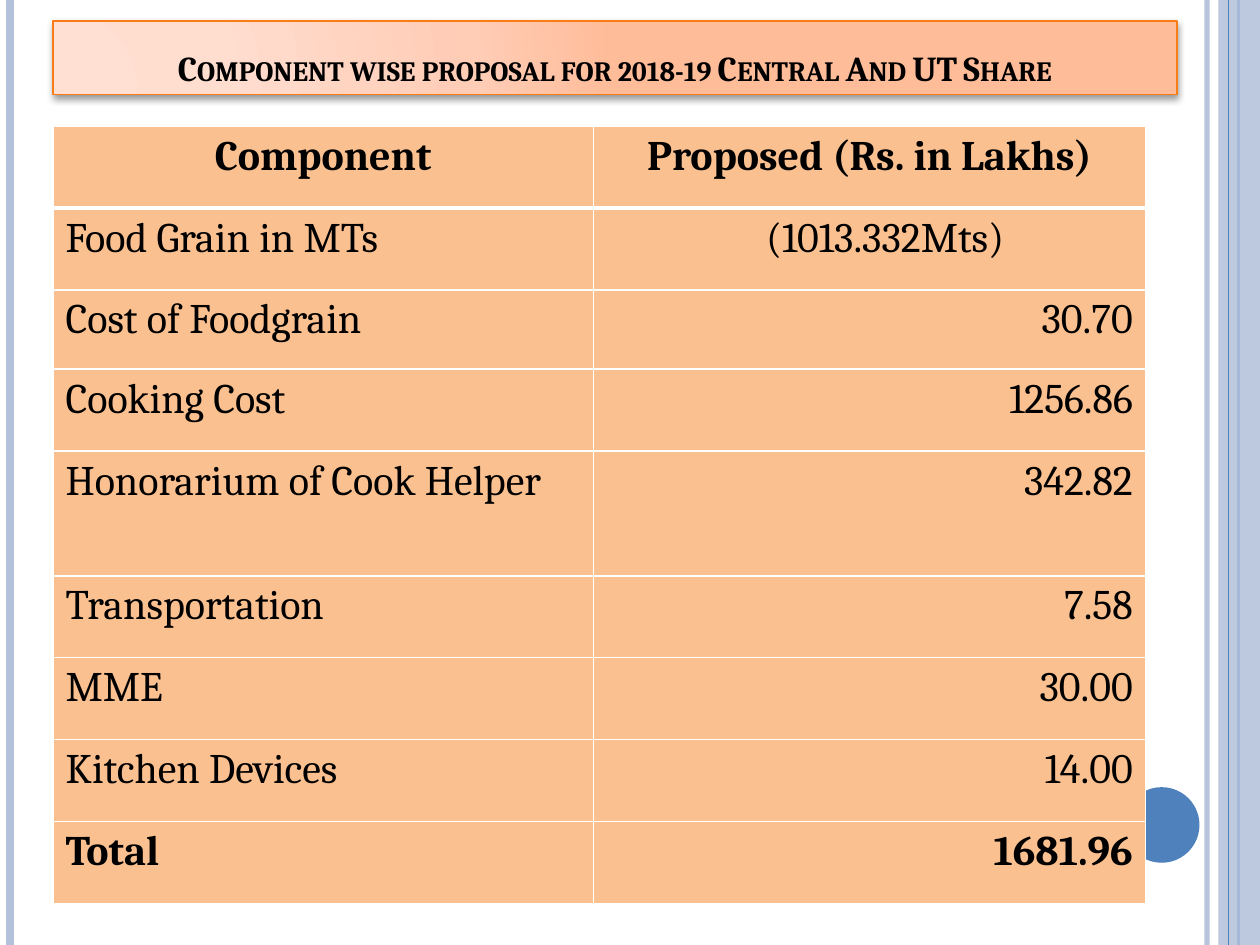
from typing import NamedTuple, Optional

from pptx import Presentation
from pptx.dml.color import RGBColor
from pptx.enum.shapes import MSO_CONNECTOR as CONN, MSO_SHAPE as SHAPE
from pptx.enum.text import MSO_ANCHOR as ANCHOR, PP_ALIGN as ALIGN
from pptx.oxml import parse_xml
from pptx.oxml.ns import nsdecls, qn
from pptx.util import Inches, Pt

WIDTH, HEIGHT = 10, 7.5
LEFT = 0.042
BLACK = RGBColor(0x00, 0x00, 0x00)
WHITE = RGBColor(0xFF, 0xFF, 0xFF)
BLUE = RGBColor(0x4F, 0x81, 0xBD)
PALE_BLUE = RGBColor(0xB3, 0xC1, 0xDB)
ORANGE = RGBColor(0xF9, 0x7D, 0x16)
PEACH = RGBColor(0xFA, 0xC0, 0x90)
TITLE_STOPS = [
    (0, RGBColor(0xFF, 0xE0, 0xD3)),
    (30, RGBColor(0xFF, 0xDD, 0xCF)),
    (75, RGBColor(0xFF, 0xCC, 0xB5)),
    (100, RGBColor(0xFF, 0xBC, 0x99)),
]
TITLE = "Component wise proposal for 2018-19 Central And UT Share"


class Stripe(NamedTuple):
    x: float
    weight: float
    color: RGBColor
    alpha: Optional[int] = None


class Row(NamedTuple):
    label: str
    value: str
    height: float = 0.65
    align: ALIGN = ALIGN.RIGHT
    bold: bool = False


OUTER_STRIPES = [
    Stripe(0.958, 3, PALE_BLUE, 93),
    Stripe(0.008, 4.5, PALE_BLUE),
    Stripe(0.983, 1.5, BLUE),
]
INNER_STRIPE = Stripe(0.975, 0.75, BLUE)
COLUMNS = (4.29, 4.38)
ROWS = [
    Row("Component", "Proposed (Rs. in Lakhs)", align=ALIGN.CENTER, bold=True),
    Row("Food Grain in MTs", "(1013.332Mts)", align=ALIGN.LEFT),
    Row("Cost of Foodgrain", "30.70", 0.63),
    Row("Cooking Cost", "1256.86"),
    Row("Honorarium of Cook Helper", "342.82", 0.99),
    Row("Transportation", "7.58"),
    Row("MME", "30.00"),
    Row("Kitchen Devices", "14.00"),
    Row("Total", "1681.96", bold=True),
]


def across(share: float) -> int:
    """Turn a share of the slide's width into a length."""
    return Inches(share * WIDTH)


def down(share: float) -> int:
    """Turn a share of the slide's height into a length."""
    return Inches(share * HEIGHT)


def set_alpha(el, percent: int) -> None:
    """Make the solid colour inside an element partly transparent."""
    color = next(el.iter(qn("a:srgbClr")))
    color.append(parse_xml(f'<a:alpha {nsdecls("a")} val="{percent * 1000}"/>'))


def add_stripe(s, stripe: Stripe) -> None:
    """Draw a vertical line over the whole height of the slide."""
    x = across(stripe.x)
    line = s.shapes.add_connector(CONN.STRAIGHT, x, 0, x, down(1))
    line.line.color.rgb = stripe.color
    line.line.width = Pt(stripe.weight)
    pr = line._element.spPr
    if stripe.alpha:
        set_alpha(pr, stripe.alpha)
    pr.append(parse_xml(f'<a:effectLst {nsdecls("a")}/>'))


def add_shape(s, kind: SHAPE, x: float, y: float, w: float, h: float,
              fill: Optional[RGBColor] = None):
    """Add a flat shape placed by shares of the slide."""
    sp = s.shapes.add_shape(kind, across(x), down(y), across(w), down(h))
    sp.shadow.inherit = False
    sp.line.fill.background()
    if fill is not None:
        sp.fill.solid()
        sp.fill.fore_color.rgb = fill
    return sp


def write(tf, text: str, *, size: float = 24, bold: bool = False,
          align: ALIGN = ALIGN.LEFT, indent: float = 0,
          small_caps: bool = False) -> None:
    """Write one formatted paragraph into a text frame."""
    tf.word_wrap = True
    p = tf.paragraphs[0]
    p.alignment = align
    if indent:
        pr = p._p.get_or_add_pPr()
        pr.set("marL", str(Inches(indent)))
        pr.set("indent", "0")
    r = p.add_run()
    r.text = text
    r.font.name = "Cambria"
    r.font.size = Pt(size)
    r.font.bold = bold
    r.font.color.rgb = BLACK
    if small_caps:
        r._r.get_or_add_rPr().set("cap", "small")


def add_title(s) -> None:
    """Draw the title bar with its gradient and shadow."""
    sp = add_shape(s, SHAPE.RECTANGLE, LEFT, 0.022, 0.892, 0.078)
    sp.line.color.rgb = ORANGE
    sp.line.width = Pt(1)
    stops = "".join(f'<a:gs pos="{pos * 1000}"><a:srgbClr val="{color}"/></a:gs>'
                    for pos, color in TITLE_STOPS)
    pr = sp._element.spPr
    pr.find(qn("a:prstGeom")).addnext(parse_xml(
        f'<a:gradFill {nsdecls("a")} rotWithShape="1"><a:gsLst>{stops}</a:gsLst>'
        '<a:path path="circle"><a:fillToRect l="5000" t="100000" r="120000" '
        'b="10000"/></a:path></a:gradFill>'))
    shadow = parse_xml(
        f'<a:outerShdw {nsdecls("a")} blurRad="{Pt(4)}" dist="{Pt(2)}" '
        'dir="5400000" rotWithShape="0"><a:srgbClr val="000000"/></a:outerShdw>')
    set_alpha(shadow, 40)
    pr.find(qn("a:effectLst")).append(shadow)
    sp.text_frame.vertical_anchor = ANCHOR.BOTTOM
    write(sp.text_frame, TITLE, size=20, bold=True, align=ALIGN.CENTER,
          small_caps=True)


def set_borders(cell, top: float, bottom: float) -> None:
    """Give a cell white borders of the given weights."""
    pr = cell._tc.get_or_add_tcPr()
    for side, weight in zip("LRTB", (1, 1, top, bottom)):
        pr.append(parse_xml(
            f'<a:ln{side} {nsdecls("a")} w="{Pt(weight)}"><a:solidFill>'
            f'<a:srgbClr val="{WHITE}"/></a:solidFill></a:ln{side}>'))


def add_cost_table(s) -> None:
    """Draw the table of components and proposed amounts."""
    height = sum(row.height for row in ROWS)
    table = s.shapes.add_table(len(ROWS), len(COLUMNS), across(LEFT), Inches(1),
                               Inches(sum(COLUMNS)), Inches(height)).table
    table.horz_banding = False
    for col, width in zip(table.columns, COLUMNS):
        col.width = Inches(width)
    for i, row in enumerate(ROWS):
        table.rows[i].height = Inches(row.height)
        label_align = ALIGN.LEFT if i else ALIGN.CENTER
        value_indent = 1.27 if i else 0
        columns = ((row.label, label_align, 0), (row.value, row.align, value_indent))
        for j, (text, align, indent) in enumerate(columns):
            cell = table.cell(i, j)
            set_borders(cell, 3 if i == 1 else 1, 3 if i == 0 else 1)
            cell.fill.solid()
            cell.fill.fore_color.rgb = PEACH
            write(cell.text_frame, text, bold=row.bold, align=align, indent=indent)


def main() -> None:
    """Build the slide and save it."""
    prs = Presentation()
    prs.slide_width, prs.slide_height = across(1), down(1)
    s = prs.slides.add_slide(prs.slide_layouts[6])
    for stripe in OUTER_STRIPES:
        add_stripe(s, stripe)
    band = add_shape(s, SHAPE.RECTANGLE, 0.967, 0, 0.033, 1, PALE_BLUE)
    set_alpha(band._element.spPr, 87)
    add_stripe(s, INNER_STRIPE)
    add_shape(s, SHAPE.OVAL, 0.892, 0.833, 0.06, 0.08, BLUE)
    add_title(s)
    add_cost_table(s)
    prs.save("out.pptx")


if __name__ == "__main__":
    main()
